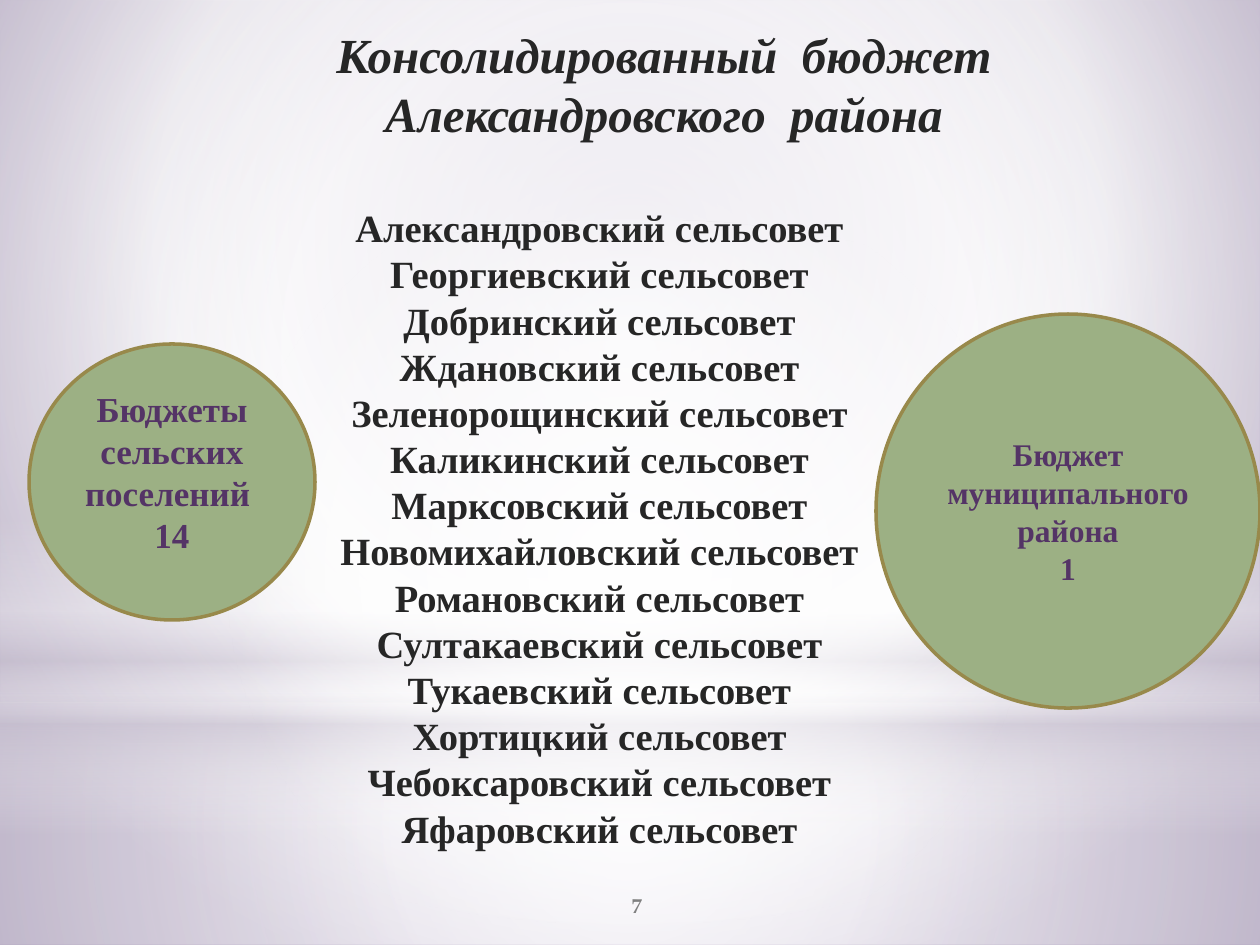
"""Builds the slide on the consolidated budget of the Alexandrovsky district."""
from lxml.etree import SubElement
from pptx import Presentation
from pptx.dml.color import RGBColor
from pptx.enum.shapes import MSO_SHAPE
from pptx.enum.text import MSO_ANCHOR, PP_ALIGN
from pptx.oxml.ns import qn
from pptx.util import Emu, Pt

SCALE = 914400 / 126
COLORS = {
    "white": "FFFFFF", "mist": "C9C2D1", "lilac": "C1B7CD", "violet": "A191B5",
    "green": "9CB084", "olive": "98894B", "purple": "543466", "ink": "262626", "gray": "808080",
}
CENTER = (50, 50, 50, 50)


def paint_gradient(fill, owner, stops, focus):
    """Give a fill its stops (position, colour, opacity), round a focus or top-down."""
    fill.gradient()
    gradient = next(owner.iter(qn("a:gradFill")))
    for child in list(gradient):
        gradient.remove(child)
    stop_list = SubElement(gradient, qn("a:gsLst"))
    for position, color, opacity in stops:
        stop = SubElement(stop_list, qn("a:gs"), pos=str(position * 1000))
        tint = SubElement(stop, qn("a:srgbClr"), val=COLORS[color])
        if opacity < 100:
            SubElement(tint, qn("a:alpha"), val=str(opacity * 1000))
    if focus:
        course = SubElement(gradient, qn("a:path"), {"path": "circle"})
        sides = {side: str(share * 1000) for side, share in zip("ltrb", focus)}
        SubElement(course, qn("a:fillToRect"), sides)
    else:
        SubElement(gradient, qn("a:lin"), ang="5400000", scaled="0")


def write(box, lines, size, color, font="Times New Roman", italic=False, bottom=6):
    """Write centred bold lines into a shape, one paragraph each."""
    frame = box.text_frame
    frame.word_wrap = True
    frame.vertical_anchor = MSO_ANCHOR.MIDDLE
    frame.margin_left = frame.margin_right = Emu(round(10 * SCALE))
    frame.margin_top = Emu(round(6 * SCALE))
    frame.margin_bottom = Emu(round(bottom * SCALE))
    for index, line in enumerate(lines):
        para = frame.add_paragraph() if index else frame.paragraphs[0]
        para.alignment = PP_ALIGN.CENTER
        para.line_spacing = Pt(round(size * 1.2, 1))
        span = para.add_run()
        span.text = line
        span.font.name = font
        span.font.size = Pt(size)
        span.font.bold = True
        span.font.italic = italic
        span.font.color.rgb = RGBColor.from_string(COLORS[color])


deck = Presentation()
deck.slide_width = Emu(round(1260 * SCALE))
deck.slide_height = Emu(round(945 * SCALE))
page = deck.slides.add_slide(deck.slide_layouts[6])

paint_gradient(page.background.fill, page.element,
               [(0, "lilac", 100), (60, "white", 100), (100, "violet", 100)], (20, 10, 20, 60))

layers = [
    (MSO_SHAPE.RECTANGLE, (0, 703, 1260, 242), CENTER,
     [(0, "white", 91), (37, "white", 76), (100, "mist", 79)]),
    (MSO_SHAPE.RECTANGLE, (0, 0, 1260, 703), CENTER,
     [(0, "white", 89), (48, "white", 62), (100, "mist", 79)]),
    (MSO_SHAPE.RECTANGLE, (0, 519, 1260, 315), None,
     [(0, "white", 0), (29, "white", 30), (45, "mist", 40),
      (55, "white", 26), (65, "mist", 60), (100, "white", 0)]),
    (MSO_SHAPE.OVAL, (0, 220, 1260, 703), CENTER,
     [(0, "white", 100), (56, "white", 0)]),
]
for kind, place, focus, stops in layers:
    layer = page.shapes.add_shape(kind, *[Emu(round(v * SCALE)) for v in place])
    layer.shadow.inherit = False
    layer.line.fill.background()
    paint_gradient(layer.fill, layer.element, stops, focus)

title = page.shapes.add_shape(
    MSO_SHAPE.ROUNDED_RECTANGLE, *[Emu(round(v * SCALE)) for v in (173, 32, 994, 103)])
title.shadow.inherit = False
title.fill.background()
title.line.fill.background()
write(title, ["Консолидированный  бюджет  Александровского  района "], 28, "ink", italic=True)

circles = [
    ((29, 344, 286, 276), ["Бюджеты", "сельских поселений ", "14"], 20, 26),
    ((876, 314, 384, 394), ["Бюджет муниципального района", "1"], 18, 6),
]
for place, lines, size, bottom in circles:
    circle = page.shapes.add_shape(MSO_SHAPE.OVAL, *[Emu(round(v * SCALE)) for v in place])
    circle.shadow.inherit = False
    circle.fill.solid()
    circle.fill.fore_color.rgb = RGBColor.from_string(COLORS["green"])
    circle.line.color.rgb = RGBColor.from_string(COLORS["olive"])
    circle.line.width = Pt(2)
    write(circle, lines, size, "purple", bottom=bottom)

councils = [
    "Александровский", "Георгиевский", "Добринский", "Ждановский", "Зеленорощинский",
    "Каликинский", "Марксовский", "Новомихайловский", "Романовский", "Султакаевский",
    "Тукаевский", "Хортицкий", "Чебоксаровский", "Яфаровский",
]
council_list = page.shapes.add_textbox(*[Emu(round(v * SCALE)) for v in (318, 195, 563, 665)])
write(council_list, [f"{name} сельсовет" for name in councils], 22, "ink")

page_number = page.shapes.add_textbox(*[Emu(round(v * SCALE)) for v in (511, 880, 252, 50)])
write(page_number, ["7"], 12, "gray", font="TeX Gyre Pagella")

deck.save("out.pptx")
